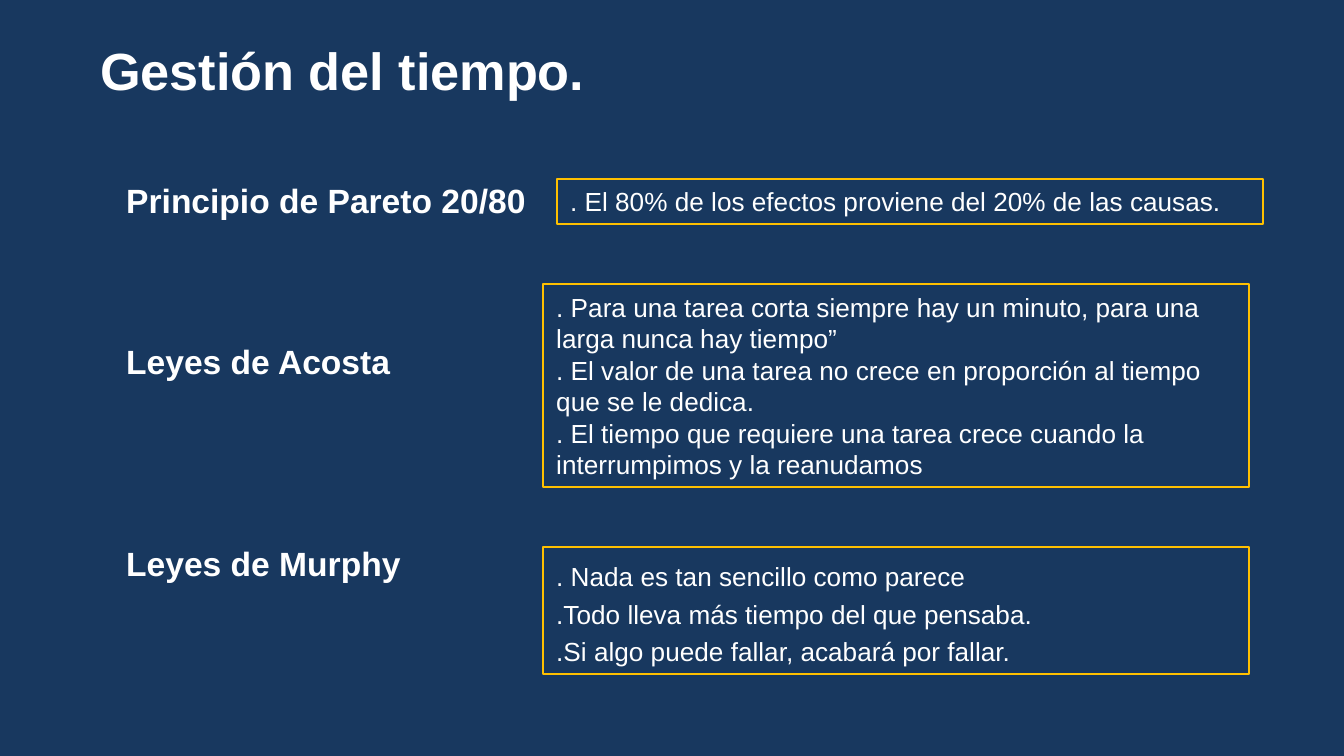
from pptx import Presentation
from pptx.dml.color import RGBColor
from pptx.enum.shapes import MSO_SHAPE
from pptx.enum.text import MSO_ANCHOR, PP_ALIGN
from pptx.util import Emu, Pt

RECTANGLE = MSO_SHAPE.RECTANGLE
TOP, MIDDLE = MSO_ANCHOR.TOP, MSO_ANCHOR.MIDDLE
LEFT = PP_ALIGN.LEFT

NAVY = RGBColor(0x18, 0x38, 0x5F)
WHITE = RGBColor(0xFF, 0xFF, 0xFF)
GOLD = RGBColor(0xFF, 0xC0, 0x00)
FONT = "Arial"
PX = 6804  # EMU in one px

TITLE = "Gestión del tiempo."
TITLE_AREA = (87, 19, 647, 171)
LABEL_LEFT, LABEL_WIDTH, LABEL_HEIGHT = 113, 430, 52
CARD_WIDTH = 706

# label, label top, card left, card top, card height, line spacing, statements
SECTIONS = [
    ("Principio de Pareto 20/80", 173, 557, 179, 45, 1.0, [
        ". El 80% de los efectos proviene del 20% de las causas.",
    ]),
    ("Leyes de Acosta", 334, 543, 284, 203, 1.0, [
        ". Para una tarea corta siempre hay un minuto, para una larga nunca hay tiempo”",
        ". El valor de una tarea no crece en proporción al tiempo que se le dedica.",
        ". El tiempo que requiere una tarea crece cuando la interrumpimos y la reanudamos",
    ]),
    ("Leyes de Murphy", 536, 543, 547, 127, 1.2, [
        ". Nada es tan sencillo como parece",
        ".Todo lleva más tiempo del que pensaba.",
        ".Si algo puede fallar, acabará por fallar.",
    ]),
]


def px(*lengths):
    return [Emu(length * PX) for length in lengths]


def write(box, lines, size, bold=False, spacing=1.0, anchor=TOP):
    frame = box.text_frame
    frame.word_wrap = True
    frame.vertical_anchor = anchor
    frame.text = "\n".join(lines)
    for para in frame.paragraphs:
        para.alignment = LEFT
        para.line_spacing = spacing
        para.font.name = FONT
        para.font.size = Pt(size)
        para.font.bold = bold
        para.font.color.rgb = WHITE
    return frame


deck = Presentation()
deck.slide_width, deck.slide_height = px(1344, 756)
page = deck.slides.add_slide(deck.slide_layouts[6])
page.background.fill.solid()
page.background.fill.fore_color.rgb = NAVY

# Title
title = page.shapes.add_textbox(*px(*TITLE_AREA))
title_frame = write(title, [TITLE], 28, bold=True, spacing=Pt(36.5))
title_frame.margin_top = title_frame.margin_left = Pt(7.2)

# One label and one outlined card for each principle
for label, label_top, left, top, height, spacing, statements in SECTIONS:
    heading = page.shapes.add_textbox(
        *px(LABEL_LEFT, label_top, LABEL_WIDTH, LABEL_HEIGHT))
    write(heading, [label], 18, bold=True)

    card = page.shapes.add_shape(RECTANGLE, *px(left, top, CARD_WIDTH, height))
    card.shadow.inherit = False
    card.fill.background()
    card.line.color.rgb = GOLD
    card.line.width = Pt(0.75)
    write(card, statements, 14, spacing=spacing, anchor=MIDDLE)

deck.save("out.pptx")
